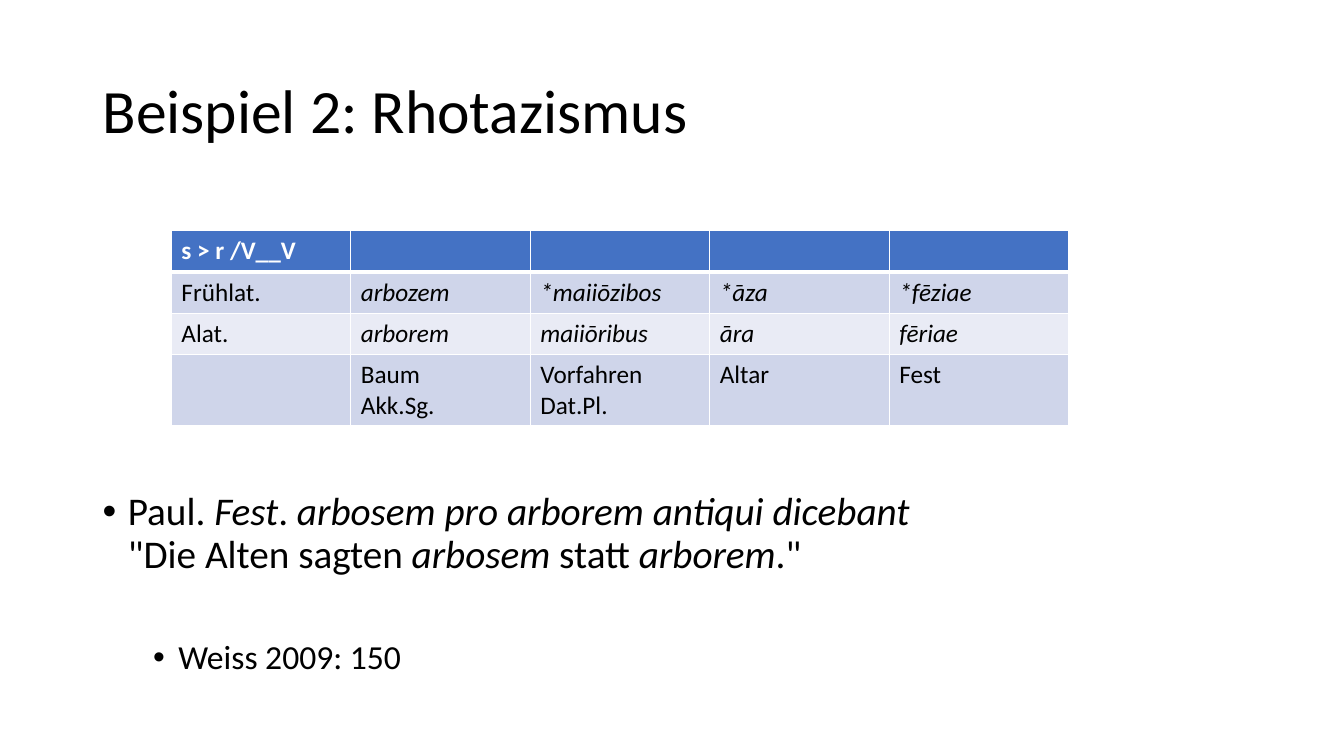
import pptx
import pptx.dml.color
import pptx.enum.text
import pptx.oxml
import pptx.oxml.ns
import pptx.util
from pptx.util import Inches

FONT = "Calibri"
BLACK, WHITE, BLUE = "000000", "FFFFFF", "4472C4"
BAND_DARK, BAND_LIGHT = "CFD5EA", "E9EBF5"

SOUND_CHANGE = [
    ["s > r /V__V", "", "", "", ""],
    ["Frühlat.", "arbozem", "*maiiōzibos", "*āza", "*fēziae"],
    ["Alat.", "arborem", "maiiōribus", "āra", "fēriae"],
    ["", "Baum\nAkk.Sg.", "Vorfahren Dat.Pl.", "Altar", "Fest"],
]
ROW_FILLS = [BLUE, BAND_DARK, BAND_LIGHT, BAND_DARK]
ROW_HEIGHTS = [0.41, 0.41, 0.41, 0.7]
COLUMN_WIDTH = 1.78


def rgb(color):
    return pptx.dml.color.RGBColor.from_string(color)


def add_text(paragraph, text, size=18, color=BLACK, bold=False, italic=False):
    run = paragraph.add_run()
    run.text = text
    run.font.name = FONT
    run.font.size = pptx.util.Pt(size)
    run.font.color.rgb = rgb(color)
    run.font.bold = bold
    run.font.italic = italic


def add_text_frame(slide, left, top, width, height, anchor):
    frame = slide.shapes.add_textbox(
        Inches(left), Inches(top), Inches(width), Inches(height)).text_frame
    frame.word_wrap = True
    frame.vertical_anchor = anchor
    frame.paragraphs[0].line_spacing = 0.9
    return frame


def set_bullet(paragraph, indent):
    properties = paragraph._p.get_or_add_pPr()
    properties.set("marL", str(Inches(indent)))
    properties.set("indent", str(Inches(-0.25)))
    namespace = pptx.oxml.ns.nsdecls("a")
    properties.append(pptx.oxml.parse_xml(f'<a:buFont {namespace} typeface="Arial"/>'))
    properties.append(pptx.oxml.parse_xml(f'<a:buChar {namespace} char="•"/>'))


def set_borders(cell, bottom_width):
    properties = cell._tc.get_or_add_tcPr()
    for side, width in (("L", 1), ("R", 1), ("T", 1), ("B", bottom_width)):
        properties.append(pptx.oxml.parse_xml(
            f'<a:ln{side} {pptx.oxml.ns.nsdecls("a")} w="{pptx.util.Pt(width)}">'
            f'<a:solidFill><a:srgbClr val="{WHITE}"/></a:solidFill></a:ln{side}>'))


def add_sound_change_table(slide):
    table = slide.shapes.add_table(
        len(SOUND_CHANGE), len(SOUND_CHANGE[0]), Inches(1.7), Inches(2.29),
        Inches(COLUMN_WIDTH * len(SOUND_CHANGE[0])), Inches(sum(ROW_HEIGHTS))).table
    for column in table.columns:
        column.width = Inches(COLUMN_WIDTH)
    for row, words in enumerate(SOUND_CHANGE):
        table.rows[row].height = Inches(ROW_HEIGHTS[row])
        header = row == 0
        for column, word in enumerate(words):
            cell = table.cell(row, column)
            set_borders(cell, 3 if header else 1)
            cell.fill.solid()
            cell.fill.fore_color.rgb = rgb(ROW_FILLS[row])
            for number, line in enumerate(word.split("\n") if word else []):
                frame = cell.text_frame
                paragraph = frame.add_paragraph() if number else frame.paragraphs[0]
                add_text(paragraph, line, color=WHITE if header else BLACK,
                         bold=header, italic=row in (1, 2) and column > 0)


def add_quotation(slide):
    frame = add_text_frame(slide, 0.92, 4.83, 11.5, 1.93,
                           pptx.enum.text.MSO_ANCHOR.TOP)
    quotation = frame.paragraphs[0]
    set_bullet(quotation, 0.25)
    latin = ["Paul. ", "Fest", ". ", "arbosem pro arborem antiqui dicebant "]
    german = ["\"Die Alten sagten ", "arbosem", " statt ", "arborem", ".\""]
    # Upright and italic pieces alternate
    for number, piece in enumerate(latin):
        add_text(quotation, piece, size=28, italic=number % 2 == 1)
    quotation.add_line_break()
    for number, piece in enumerate(german):
        add_text(quotation, piece, size=28, italic=number % 2 == 1)

    reference = frame.add_paragraph()
    reference.level = 1
    reference.line_spacing = 0.9
    reference.space_before = pptx.util.Pt(46)
    set_bullet(reference, 0.75)
    add_text(reference, "Weiss 2009: 150", size=24)


def main():
    presentation = pptx.Presentation()
    presentation.slide_width = Inches(13.33)
    presentation.slide_height = Inches(7.5)
    slide = presentation.slides.add_slide(presentation.slide_layouts[6])

    # Title
    title = add_text_frame(slide, 0.92, 0.4, 11.5, 1.45,
                           pptx.enum.text.MSO_ANCHOR.MIDDLE)
    add_text(title.paragraphs[0], "Beispiel 2: Rhotazismus", size=44)

    # Word forms, then the quotation with its reference
    add_sound_change_table(slide)
    add_quotation(slide)

    presentation.save("out.pptx")


if __name__ == "__main__":
    main()
